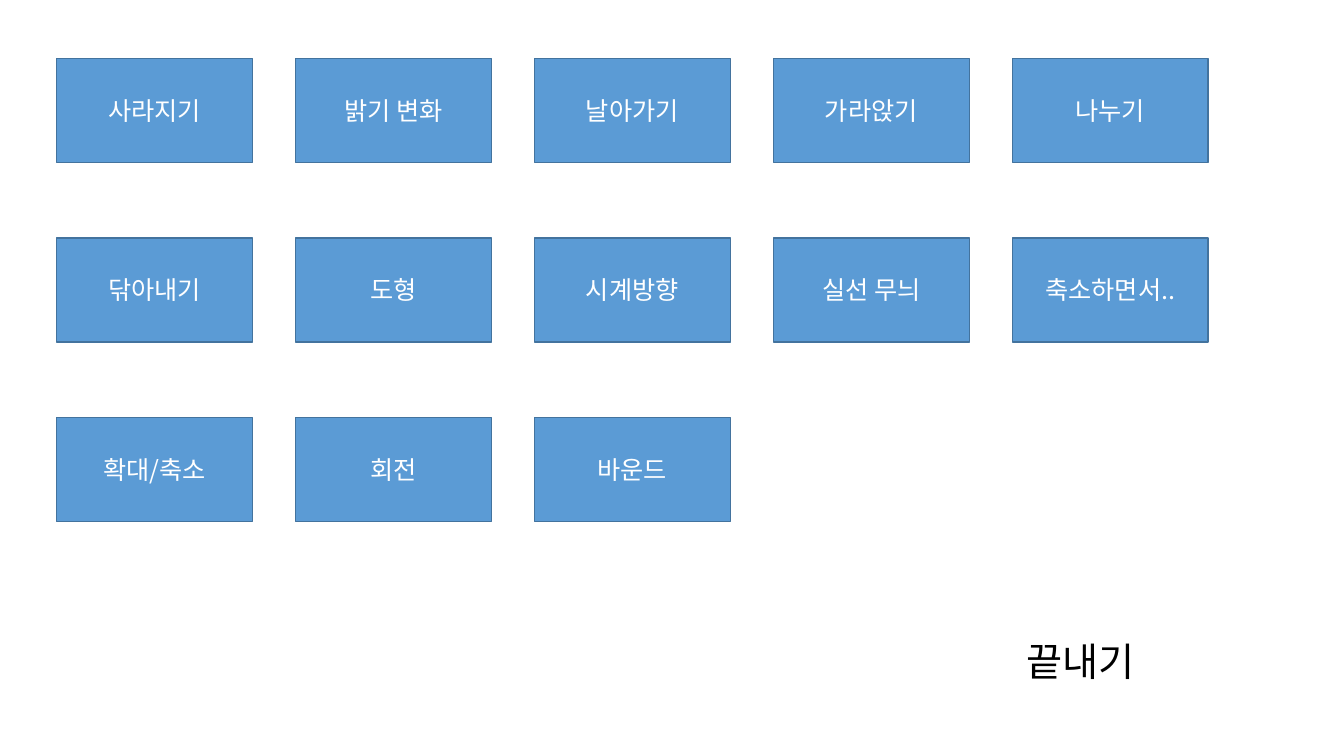
"""Build a slide with a grid of effect buttons and an end label."""
import dataclasses

import lxml.etree
import pptx
import pptx.dml.color
import pptx.enum.shapes
import pptx.enum.text
import pptx.oxml.ns
import pptx.shapes.base
import pptx.slide
import pptx.util

BLUE = pptx.dml.color.RGBColor(0x5B, 0x9B, 0xD5)
EDGE = pptx.dml.color.RGBColor(0x43, 0x73, 0x9E)
WHITE = pptx.dml.color.RGBColor(0xFF, 0xFF, 0xFF)
BLACK = pptx.dml.color.RGBColor(0x00, 0x00, 0x00)
FACE = "Noto Sans CJK KR"
LEFT, TOP = 0.56, 0.58
COL, ROW = 2.37, 1.78
ROWS = (
    ("사라지기", "밝기 변화", "날아가기", "가라앉기", "나누기"),
    ("닦아내기", "도형", "시계방향", "실선 무늬", "축소하면서.."),
    ("확대/축소", "회전", "바운드"),
)


@dataclasses.dataclass(frozen=True)
class Cell:
    """Text with its place and size in grid columns and rows."""
    text: str
    col: float
    row: float
    wide: float = 0.82
    high: float = 0.58

    def box(self) -> tuple[int, int, int, int]:
        """Return left, top, width and height."""
        return (
            pptx.util.Inches(LEFT + self.col * COL),
            pptx.util.Inches(TOP + self.row * ROW),
            pptx.util.Inches(self.wide * COL),
            pptx.util.Inches(self.high * ROW),
        )


def put(item: object, form: dict[str, object]) -> None:
    """Set each format value on an item."""
    for name, value in form.items():
        setattr(item, name, value)


def write(shape: pptx.shapes.base.BaseShape, text: str, size: int,
          color: pptx.dml.color.RGBColor, frame: dict[str, object],
          align: pptx.enum.text.PP_ALIGN) -> None:
    """Write one styled line of text in a shape."""
    put(shape.text_frame, {"word_wrap": True, **frame})
    para = shape.text_frame.paragraphs[0]
    para.alignment = align
    run = para.add_run()
    run.text = text
    put(run.font, {"size": pptx.util.Pt(size), "name": FACE})
    run.font.color.rgb = color
    east = lxml.etree.SubElement(run.font._element, pptx.oxml.ns.qn("a:ea"))
    east.set("typeface", FACE)


def tile(slide: pptx.slide.Slide, cell: Cell) -> None:
    """Draw one blue button."""
    shape = slide.shapes.add_shape(
        pptx.enum.shapes.MSO_SHAPE.RECTANGLE, *cell.box())
    shape.shadow.inherit = False
    shape.fill.solid()
    shape.fill.fore_color.rgb = BLUE
    shape.line.color.rgb = EDGE
    shape.line.width = pptx.util.Pt(1)
    write(shape, cell.text, 18, WHITE,
          {"vertical_anchor": pptx.enum.text.MSO_ANCHOR.MIDDLE},
          pptx.enum.text.PP_ALIGN.CENTER)


def label(slide: pptx.slide.Slide, cell: Cell) -> None:
    """Draw one plain text label."""
    write(slide.shapes.add_textbox(*cell.box()), cell.text, 28, BLACK,
          {"auto_size": pptx.enum.text.MSO_AUTO_SIZE.SHAPE_TO_FIT_TEXT},
          pptx.enum.text.PP_ALIGN.LEFT)


def main() -> None:
    """Build and save the deck."""
    deck = pptx.Presentation()
    put(deck, {"slide_width": pptx.util.Inches(13.33),
               "slide_height": pptx.util.Inches(7.5)})
    slide = deck.slides.add_slide(deck.slide_layouts[6])
    for row, texts in enumerate(ROWS):
        for col, text in enumerate(texts):
            tile(slide, Cell(text, col, row))
    label(slide, Cell("끝내기", 4.02, 3.2, 0.8, 0.32))
    deck.save("out.pptx")


if __name__ == "__main__":
    main()
